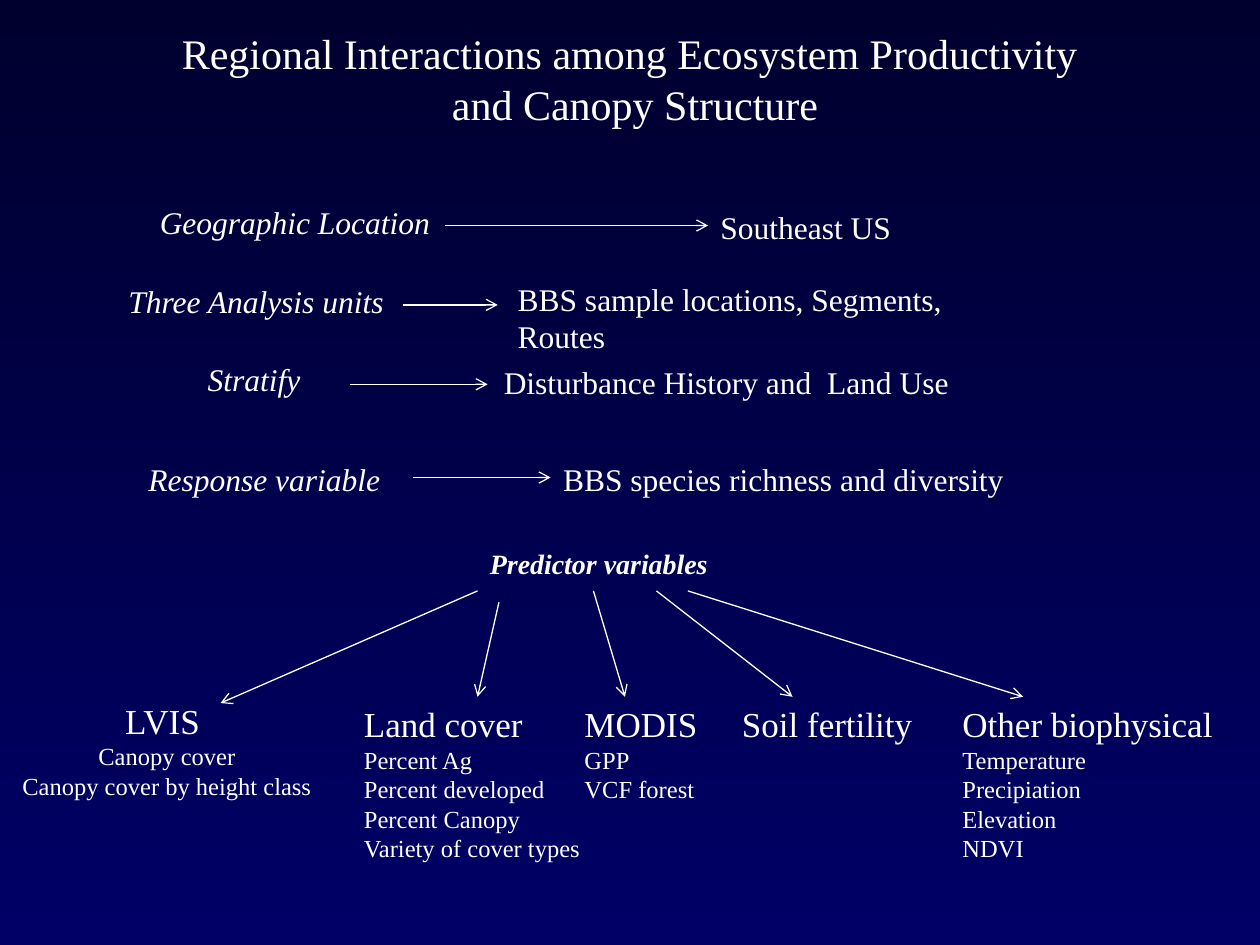
from typing import NamedTuple

from lxml import etree
from pptx import Presentation
from pptx.dml.color import RGBColor
from pptx.enum import shapes, text
from pptx.oxml import ns
from pptx.util import Inches, Pt

WHITE = RGBColor(0xFF, 0xFF, 0xFF)
NIGHT = RGBColor(0x00, 0x00, 0x2F)
NAVY = RGBColor(0x00, 0x00, 0x66)
FONT = "Times New Roman"
LEFT, CENTER = text.PP_ALIGN.LEFT, text.PP_ALIGN.CENTER


class Box(NamedTuple):
    left: float
    top: float
    width: float
    height: float


class Arrow(NamedTuple):
    x1: float
    y1: float
    x2: float
    y2: float


class DesignRow(NamedTuple):
    topic: str
    topic_box: Box
    arrow: Arrow
    choice: str
    choice_box: Box


class Predictor(NamedTuple):
    lines: list[str]
    box: Box
    arrow: Arrow
    align: text.PP_ALIGN = LEFT


TITLE = ["Regional Interactions among Ecosystem Productivity ", "and Canopy Structure"]

DESIGN_ROWS = [
    DesignRow("Geographic Location", Box(1.17, 1.56, 2.5, 0.4),
              Arrow(3.53, 1.79, 5.62, 1.79),
              "Southeast US", Box(5.62, 1.6, 1.57, 0.4)),
    DesignRow("Three Analysis units", Box(0.92, 2.19, 2.43, 0.4),
              Arrow(3.2, 2.42, 3.95, 2.42),
              "BBS sample locations, Segments, Routes", Box(4.01, 2.17, 4.32, 0.4)),
    DesignRow("Stratify", Box(1.55, 2.81, 1.06, 0.4),
              Arrow(2.78, 3.05, 3.87, 3.05),
              "Disturbance History and  Land Use", Box(3.9, 2.83, 3.77, 0.4)),
    DesignRow("Response variable", Box(1.08, 3.6, 2.17, 0.4),
              Arrow(3.28, 3.79, 4.37, 3.79),
              "BBS species richness and diversity", Box(4.37, 3.6, 3.75, 0.4)),
]

PREDICTORS = [
    Predictor(["LVIS ", "Canopy cover", "Canopy cover by height class"],
              Box(0.07, 5.5, 2.51, 0.91), Arrow(3.79, 4.69, 1.75, 5.58), CENTER),
    Predictor(["Land cover", "Percent Ag", "Percent developed", "Percent Canopy",
               "Variety of cover types"],
              Box(2.79, 5.53, 1.92, 1.38), Arrow(3.96, 4.78, 3.79, 5.53)),
    Predictor(["MODIS", "GPP", "VCF forest"],
              Box(4.54, 5.53, 1.12, 0.91), Arrow(4.71, 4.69, 4.96, 5.53)),
    Predictor(["Soil fertility"],
              Box(5.79, 5.53, 1.57, 0.44), Arrow(5.21, 4.69, 6.29, 5.53)),
    Predictor(["Other biophysical", "Temperature", "Precipiation", "Elevation", "NDVI"],
              Box(7.54, 5.53, 2.22, 1.38), Arrow(5.46, 4.69, 8.12, 5.53)),
]


def write_lines(frame, lines: list[str], sizes: list[int], align=LEFT,
                bold: bool = False, italic: bool = False) -> None:
    frame.text = "\n".join(lines)
    for paragraph, size in zip(frame.paragraphs, sizes):
        paragraph.alignment = align
        font = paragraph.font
        font.name, font.size = FONT, Pt(size)
        font.bold, font.italic = bold, italic
        font.color.rgb = WHITE


def add_label(slide, box: Box, lines: list[str], sizes: list[int], **style) -> None:
    frame = slide.shapes.add_textbox(*map(Inches, box)).text_frame
    frame.word_wrap = False
    write_lines(frame, lines, sizes, **style)


def add_arrow(slide, arrow: Arrow) -> None:
    connector = slide.shapes.add_connector(
        shapes.MSO_CONNECTOR.STRAIGHT, *map(Inches, arrow))
    connector.line.color.rgb = WHITE
    connector.line.width = Pt(0.75)
    properties = connector.element.spPr
    line = properties.find(ns.qn("a:ln"))
    etree.SubElement(line, ns.qn("a:tailEnd"), type="arrow")
    etree.SubElement(properties, ns.qn("a:effectLst"))


def paint_background(slide) -> None:
    fill = slide.background.fill
    fill.gradient()
    fill.gradient_angle = 270
    for stop, color in zip(fill.gradient_stops, (NIGHT, NAVY)):
        stop.color.rgb = color


def add_title(slide) -> None:
    title = slide.shapes.title
    title.left, title.top, title.width, title.height = map(
        Inches, Box(0.25, 0.17, 9.58, 0.91))
    frame = title.text_frame
    frame.word_wrap = True
    frame.auto_size = text.MSO_AUTO_SIZE.NONE
    frame.vertical_anchor = text.MSO_ANCHOR.TOP
    write_lines(frame, TITLE, [24, 24], CENTER)


def main() -> None:
    deck = Presentation()
    deck.slide_width, deck.slide_height = Inches(10), Inches(7.5)
    slide = deck.slides.add_slide(deck.slide_layouts.get_by_name("Title Only"))
    paint_background(slide)
    add_title(slide)

    for row in DESIGN_ROWS:
        add_label(slide, row.topic_box, [row.topic], [18], italic=True)
        add_arrow(slide, row.arrow)
        add_label(slide, row.choice_box, [row.choice], [18])

    add_label(slide, Box(3.79, 4.29, 2.03, 0.37), ["Predictor variables"], [16],
              bold=True, italic=True)
    for predictor in PREDICTORS:
        add_arrow(slide, predictor.arrow)
        sizes = [20] + [14] * (len(predictor.lines) - 1)
        add_label(slide, predictor.box, predictor.lines, sizes, align=predictor.align)

    deck.save("out.pptx")


if __name__ == "__main__":
    main()
